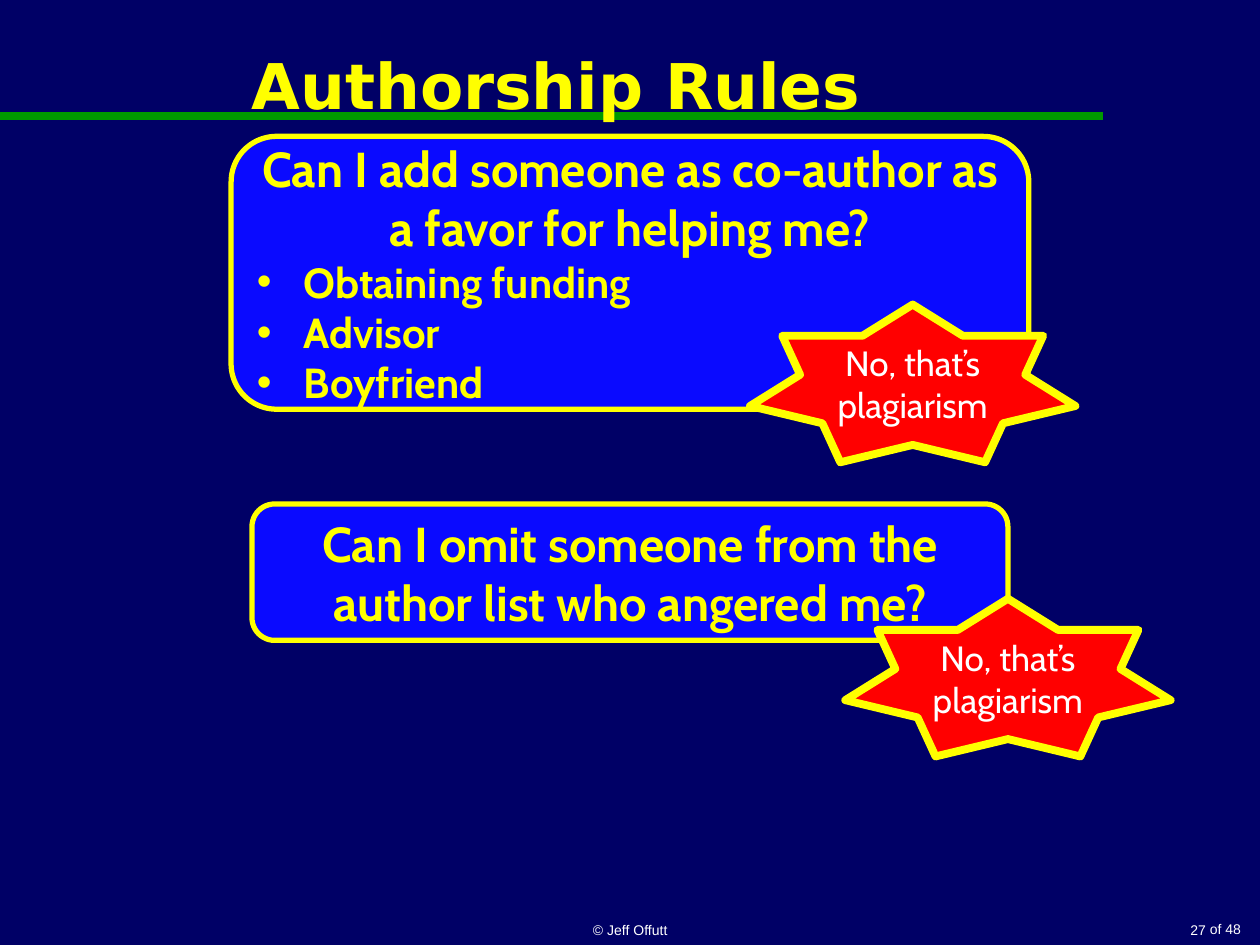
"""Build the slide on authorship rules."""
from lxml.etree import SubElement
from pptx import Presentation
from pptx.dml.color import RGBColor
from pptx.enum.shapes import MSO_CONNECTOR, MSO_SHAPE
from pptx.enum.text import MSO_ANCHOR, MSO_AUTO_SIZE, PP_ALIGN
from pptx.oxml.ns import qn
from pptx.util import Cm, Pt

NAVY = RGBColor(0x00, 0x00, 0x66)
BLUE = RGBColor(0x0A, 0x0A, 0xFF)
GREEN = RGBColor(0x00, 0x99, 0x00)
YELLOW = RGBColor(0xFF, 0xFF, 0x00)
RED = RGBColor(0xFF, 0x00, 0x00)
WHITE = RGBColor(0xFF, 0xFF, 0xFF)


def add_run(para, text, size, font, color, bold=False, align=PP_ALIGN.CENTER):
    """Add one styled run to a paragraph."""
    para.alignment = align
    run = para.add_run()
    run.text = text
    run.font.size = Pt(size)
    run.font.name = font
    run.font.bold = bold
    run.font.color.rgb = color


def set_bullet(para):
    """Give a paragraph a hanging bullet."""
    props = para._p.get_or_add_pPr()
    props.set("marL", str(Cm(0.95)))
    props.set("indent", str(-Cm(0.95)))
    SubElement(props, qn("a:buFont"), typeface="Arial")
    SubElement(props, qn("a:buChar"), char="•")


def add_title(slide, text):
    """Place and fill the title."""
    title = slide.shapes.title
    title.left, title.top = Cm(0.2), Cm(0)
    title.width, title.height = Cm(22.02), Cm(3.39)
    frame = title.text_frame
    frame.auto_size = MSO_AUTO_SIZE.NONE
    frame.vertical_anchor = MSO_ANCHOR.MIDDLE
    add_run(frame.paragraphs[0], text, 36, "DejaVu Sans", YELLOW, True)


def add_rule(slide):
    """Draw the green rule behind the title."""
    rule = slide.shapes.add_connector(
        MSO_CONNECTOR.STRAIGHT, Cm(0), Cm(2.33), Cm(22.23), Cm(2.33))
    rule.line.color.rgb = GREEN
    rule.line.width = Pt(4.5)
    SubElement(rule.element.spPr, qn("a:effectLst"))
    rule.element.addnext(slide.shapes.title.element)


def add_note(slide, box, text, align, anchor=MSO_ANCHOR.BOTTOM, wrap=True):
    """Add a small footer text."""
    frame = slide.shapes.add_textbox(*map(Cm, box)).text_frame
    frame.word_wrap = wrap
    frame.vertical_anchor = anchor
    add_run(frame.paragraphs[0], text, 8, "Arial", WHITE, align=align)


def add_shape(slide, kind, box, fill, width, anchor):
    """Add a filled shape with a yellow edge and return its text frame."""
    shape = slide.shapes.add_shape(kind, *map(Cm, box))
    shape.shadow.inherit = False
    shape.fill.solid()
    shape.fill.fore_color.rgb = fill
    shape.line.color.rgb = YELLOW
    shape.line.width = Pt(width)
    frame = shape.text_frame
    frame.word_wrap = True
    frame.vertical_anchor = anchor
    return frame


def add_card(slide, box, ask, items=()):
    """Add a question card with optional bullets."""
    frame = add_shape(slide, MSO_SHAPE.ROUNDED_RECTANGLE, box, BLUE, 3,
                      MSO_ANCHOR.MIDDLE)
    add_run(frame.paragraphs[0], ask, 28, "Cabin", YELLOW, True)
    for item in items:
        para = frame.add_paragraph()
        set_bullet(para)
        add_run(para, item, 24, "Cabin", YELLOW, True, PP_ALIGN.LEFT)


def add_star(slide, left, top):
    """Add a star that holds the answer."""
    frame = add_shape(slide, MSO_SHAPE.STAR_7_POINT, (left, top, 6.56, 3.18),
                      RED, 4.5, MSO_ANCHOR.TOP)
    add_run(frame.paragraphs[0], "No, that’s plagiarism", 20, "Cabin", WHITE)


def main():
    """Build and save the slide."""
    deck = Presentation()
    deck.slide_width, deck.slide_height = Cm(25.4), Cm(19.05)
    slide = deck.slides.add_slide(deck.slide_layouts[5])
    slide.background.fill.solid()
    slide.background.fill.fore_color.rgb = NAVY
    add_title(slide, "Authorship Rules")
    add_rule(slide)
    add_note(slide, (24.13, 18.43, 1.14, 0.61), "of 48", PP_ALIGN.RIGHT,
             MSO_ANCHOR.TOP, False)
    add_note(slide, (8.68, 18.2, 8.05, 0.85), "© Jeff Offutt",
             PP_ALIGN.CENTER)
    add_note(slide, (20.11, 18.2, 4.45, 0.85), "27", PP_ALIGN.RIGHT)
    add_card(slide, (4.66, 2.75, 16.08, 5.5),
             "Can I add someone as co-author as a favor for helping me?",
             ("Obtaining funding", "Advisor", "Boyfriend"))
    add_star(slide, 15.12, 6.14)
    add_card(slide, (5.08, 10.16, 15.24, 2.75),
             "Can I omit someone from the author list who angered me?")
    add_star(slide, 17.04, 12.07)
    deck.save("out.pptx")


if __name__ == "__main__":
    main()
